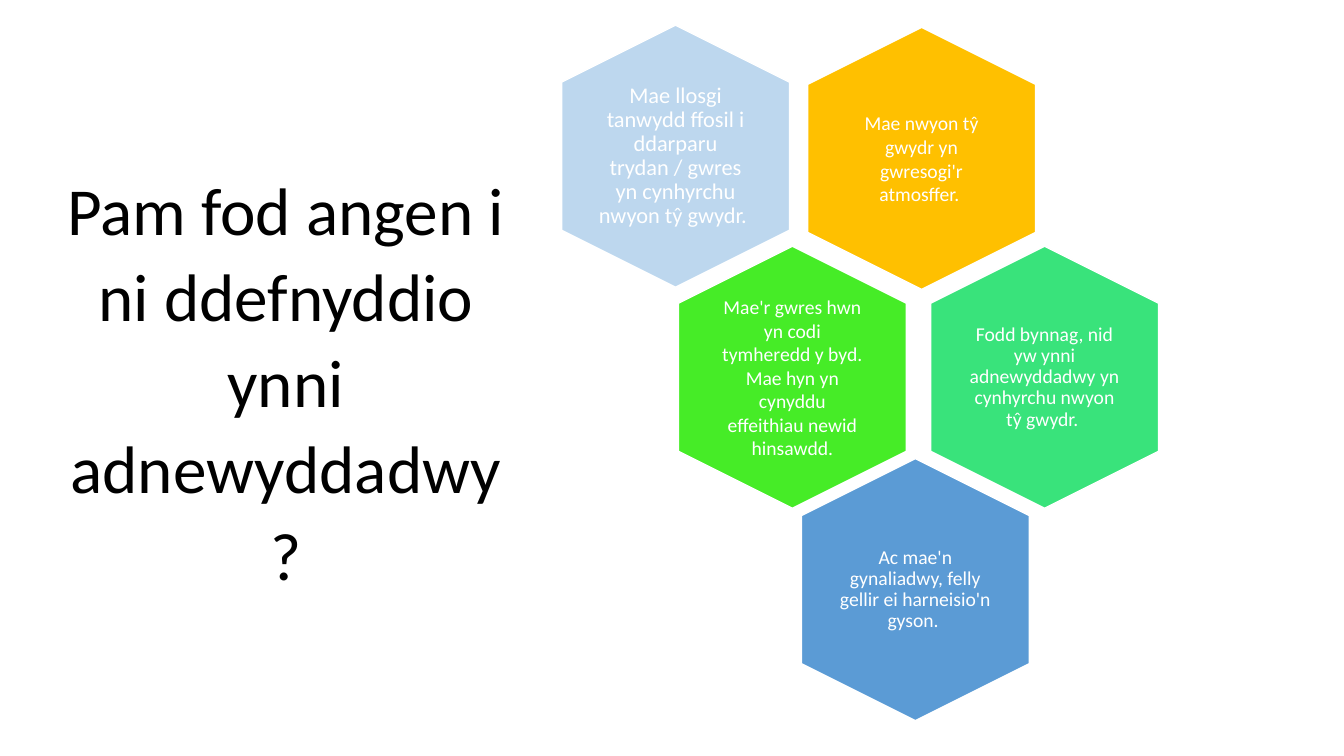
"""Build a slide with a title beside a honeycomb of five statements on renewable energy."""
from dataclasses import dataclass

from pptx import Presentation
from pptx.dml.color import RGBColor
from pptx.enum.shapes import MSO_SHAPE
from pptx.enum.text import MSO_ANCHOR, MSO_AUTO_SIZE, PP_ALIGN
from pptx.util import Inches, Pt

TITLE = "Pam fod angen i ni ddefnyddio ynni adnewyddadwy?"

# column, row, fill, size, line spacing, inset, text
CELLS = [
    (2, 0.01, "amber", "body", 1.0, 0.06, "Mae nwyon tŷ gwydr yn gwresogi'r atmosffer. "),
    (0, 0, "pale", "lead", 0.9, 0,
     "Mae llosgi tanwydd ffosil i ddarparu trydan / gwres yn cynhyrchu nwyon tŷ gwydr. "),
    (0.95, 1.02, "lime", "body", 1.0, 0.06,
     "Mae'r gwres hwn yn codi tymheredd y byd. Mae hyn yn cynyddu effeithiau newid hinsawdd."),
    (3, 1.02, "mint", "body", 0.9, 0,
     "Fodd bynnag, nid yw ynni adnewyddadwy yn cynhyrchu nwyon tŷ gwydr. "),
    (1.95, 2, "blue", "body", 0.9, 0,
     "Ac mae'n gynaliadwy, felly gellir ei harneisio'n gyson. "),
]


@dataclass(frozen=True)
class Theme:
    font: str = "Calibri"
    title: int = 48
    lead: int = 16
    body: int = 14
    black: str = "000000"
    white: str = "FFFFFF"
    amber: str = "FFC000"
    pale: str = "BDD7EE"
    lime: str = "46EC27"
    mint: str = "39E37B"
    blue: str = "5B9BD5"


THEME = Theme()
SLIDE_W, SLIDE_H = 13.33, 7.5
ORIGIN_X, ORIGIN_Y = 6.7, 1.55
COL, ROW = 1.22, 2.15
HEX_SIZE = 2.6, 2.26
LABEL_SIZE = 1.55, 1.79


def rgb(name):
    return RGBColor.from_string(getattr(THEME, name))


def centred(cx, cy, size):
    w, h = size
    return [Inches(v) for v in (cx - w / 2, cy - h / 2, w, h)]


def write(sp, text, size, color, spacing, inset=None):
    tf = sp.text_frame
    tf.text = text
    tf.word_wrap = True
    tf.auto_size = MSO_AUTO_SIZE.NONE
    tf.vertical_anchor = MSO_ANCHOR.MIDDLE
    if inset is not None:
        tf.margin_left = tf.margin_right = tf.margin_top = tf.margin_bottom = Inches(inset)
    p = tf.paragraphs[0]
    p.alignment = PP_ALIGN.CENTER
    p.line_spacing = spacing
    font = p.runs[0].font
    font.name, font.size = THEME.font, Pt(getattr(THEME, size))
    font.color.rgb = rgb(color)
    return p


def add_cell(s, col, row, fill, size, spacing, inset, text):
    cx, cy = ORIGIN_X + col * COL, ORIGIN_Y + row * ROW
    sp = s.shapes.add_shape(MSO_SHAPE.HEXAGON, *centred(cx, cy, HEX_SIZE))
    sp.rotation = 90
    sp.adjustments[0], sp.adjustments[1] = 0.25, 1.1547
    sp.shadow.inherit = False
    sp.fill.solid()
    sp.fill.fore_color.rgb = rgb(fill)
    sp.line.color.rgb = rgb("white")
    sp.line.width = Pt(1)
    label = s.shapes.add_textbox(*centred(cx, cy, LABEL_SIZE))
    write(label, text, size, "white", spacing, inset)


def main():
    prs = Presentation()
    prs.slide_width, prs.slide_height = Inches(SLIDE_W), Inches(SLIDE_H)
    s = prs.slides.add_slide(prs.slide_layouts[5])
    title = s.shapes.title
    title.left, title.top = Inches(0.45), 0
    title.width, title.height = Inches(4.77), prs.slide_height
    write(title, TITLE, "title", "black", 1.07).space_after = Pt(8)
    for cell in CELLS:
        add_cell(s, *cell)
    prs.save("out.pptx")


if __name__ == "__main__":
    main()
